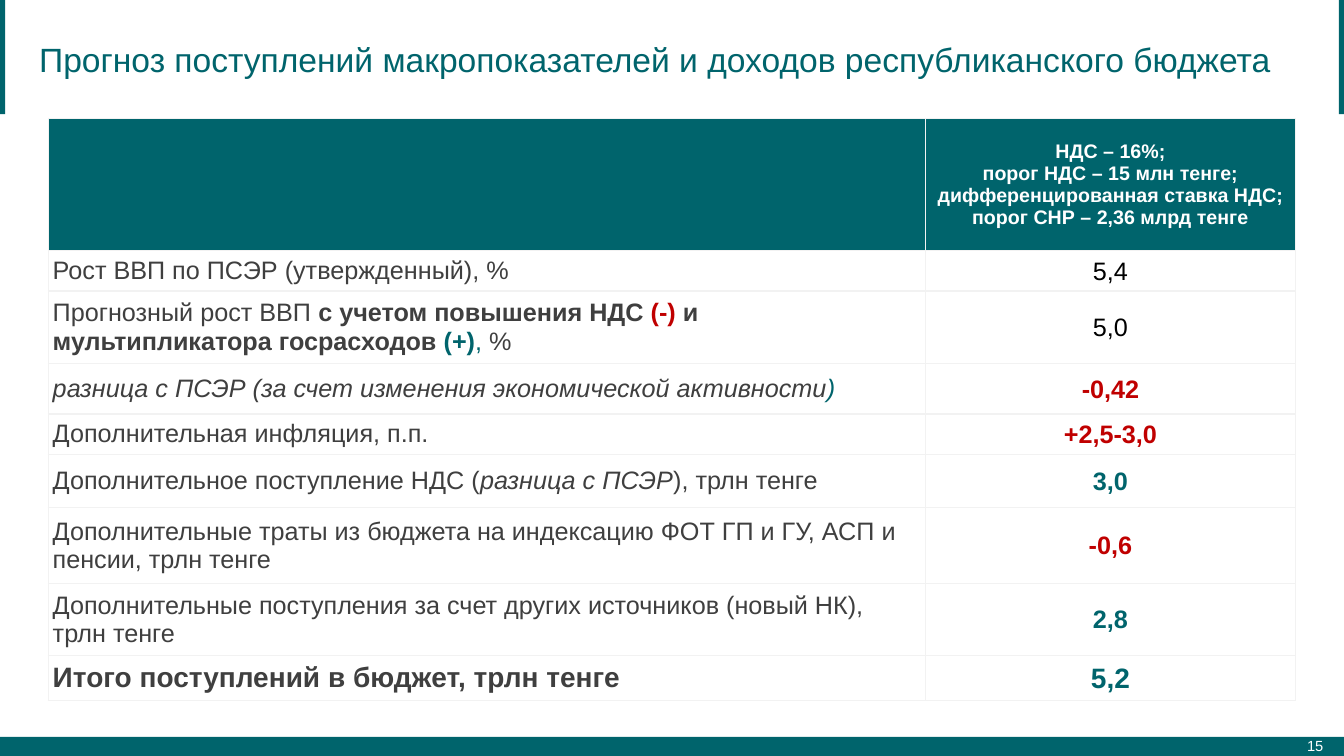
"""Build the slide on forecast budget revenue."""
from lxml import etree
from pptx import Presentation
from pptx.dml.color import RGBColor
from pptx.enum.shapes import MSO_SHAPE
from pptx.enum.text import MSO_ANCHOR, PP_ALIGN
from pptx.oxml.ns import qn
from pptx.util import Pt

RECT = MSO_SHAPE.RECTANGLE
MIDDLE = MSO_ANCHOR.MIDDLE
LEFT, CENTER, RIGHT = PP_ALIGN.LEFT, PP_ALIGN.CENTER, PP_ALIGN.RIGHT
COLORS = {"teal": "00646C", "red": "C00000", "gray": "3F3F3F",
          "black": "000000", "white": "FFFFFF", "rule": "F2F2F2"}
WIDE, HIGH = 960, 540
BOLD, SLANT = {"bold": True}, {"italic": True}
RED, TEAL = {"color": "red", "bold": True}, {"color": "teal", "bold": True}
TOTAL = {"size": 20, "bold": True}

HEAD = ["НДС – 16%;", "порог НДС – 15 млн тенге;",
        "дифференцированная ставка НДС;", "порог СНР – 2,36 млрд тенге"]
ROWS = [
    (28.8, [("Рост ВВП по ПСЭР (утвержденный), %", {})],
     ("5,4", {"color": "black"})),
    (51.8, [("Прогнозный рост ВВП", {}),
            (" с учетом повышения НДС ", BOLD), ("(-) ", RED),
            ("и мультипликатора госрасходов ", BOLD), ("(+)", TEAL),
            (", ", {"color": "teal"}), ("%", {})],
     ("5,0", {"color": "black"})),
    (36, [("разница с ПСЭР (за счет изменения экономической активности", SLANT),
          (")", {"color": "teal", "italic": True})],
     ("-0,42", RED)),
    (28.8, [("Дополнительная инфляция, п.п.", {})], ("+2,5-3,0", RED)),
    (38.2, [("Дополнительное поступление НДС (", {}),
            ("разница с ПСЭР", SLANT), ("), трлн тенге", {})],
     ("3,0", TEAL)),
    (54, [("Дополнительные траты из бюджета на индексацию ФОТ ГП и ГУ, "
           "АСП и пенсии, трлн тенге", {})],
     ("-0,6", RED)),
    (51.5, [("Дополнительные поступления за счет других источников "
             "(новый НК), трлн тенге", {})],
     ("2,8", TEAL)),
    (32.4, [("Итого поступлений в бюджет, трлн тенге", TOTAL)],
     ("5,2", {**TOTAL, "color": "teal"})),
]


def tint(name):
    return RGBColor.from_string(COLORS[name])


def write(par, text, size=18, color="gray", bold=False, italic=False):
    run = par.add_run()
    run.text = text
    font = run.font
    font.name, font.size = "Arial", Pt(size)
    font.bold, font.italic = bold, italic
    font.color.rgb = tint(color)


def inset(box, sides):
    (box.margin_left, box.margin_top,
     box.margin_right, box.margin_bottom) = map(Pt, sides)


class Deck:
    def __init__(self):
        self.show = Presentation()
        self.show.slide_width, self.show.slide_height = Pt(WIDE), Pt(HIGH)
        self.slide = self.show.slides.add_slide(self.show.slide_layouts[6])

    def bar(self, *place):
        shape = self.slide.shapes.add_shape(RECT, *map(Pt, place))
        shape.shadow.inherit = False
        shape.fill.solid()
        shape.fill.fore_color.rgb = tint("teal")
        shape.line.fill.background()

    def label(self, place, text, sides, align=LEFT, **style):
        frame = self.slide.shapes.add_textbox(*map(Pt, place)).text_frame
        frame.word_wrap = True
        frame.vertical_anchor = MIDDLE
        inset(frame, sides)
        par = frame.paragraphs[0]
        par.alignment = align
        write(par, text, **style)

    def cell(self, cell, lines, sides, align=LEFT, fill="white"):
        cell.vertical_anchor = MIDDLE
        inset(cell, sides)
        props = cell._tc.get_or_add_tcPr()
        for side in ("lnL", "lnR", "lnT", "lnB"):
            line = etree.SubElement(props, qn("a:" + side), w=str(Pt(1)))
            solid = etree.SubElement(line, qn("a:solidFill"))
            etree.SubElement(solid, qn("a:srgbClr"), val=COLORS["rule"])
        cell.fill.solid()
        cell.fill.fore_color.rgb = tint(fill)
        frame = cell.text_frame
        for num, runs in enumerate(lines):
            par = frame.add_paragraph() if num else frame.paragraphs[0]
            par.alignment = align
            for text, style in runs:
                write(par, text, **style)

    def table(self, left, top, cols, head, rows):
        tall = [94.3] + [row[0] for row in rows]
        grid = self.slide.shapes.add_table(
            len(tall), len(cols), Pt(left), Pt(top),
            Pt(sum(cols)), Pt(sum(tall))).table
        grid.first_row = grid.horz_banding = False
        for col, width in zip(grid.columns, cols):
            col.width = Pt(width)
        for row, height in zip(grid.rows, tall):
            row.height = Pt(height)
        style = {"size": 14, "color": "white", "bold": True}
        lines = [[(text, style)] for text in head]
        for num, part in enumerate(([], lines)):
            self.cell(grid.cell(0, num), part, (5, 0, 5, 0), CENTER, "teal")
        for num, (_, name, value) in enumerate(rows, 1):
            self.cell(grid.cell(num, 0), [name], (3, 3, 3, 3))
            self.cell(grid.cell(num, 1), [[value]], (0.7, 0.7, 0.7, 0), CENTER)


def main():
    deck = Deck()
    deck.bar(0, 526.3, WIDE, HIGH - 526.3)
    for left in (0, WIDE - 3.6):
        deck.bar(left, 0, 3.6, 81.5)
    deck.label((858.2, 518.4, 92.9, 28.8), "15", (5.8, 2.9, 5.8, 2.9), RIGHT,
               size=10.5, color="white")
    deck.table(34.7, 84.8, (626.4, 264.2), HEAD, ROWS)
    deck.label((20.9, 14.4, 931.7, 55.4),
               "Прогноз поступлений макропоказателей и доходов "
               "республиканского бюджета",
               (7.2, 3.6, 7.2, 3.6), size=24, color="teal")
    deck.show.save("out.pptx")


if __name__ == "__main__":
    main()
